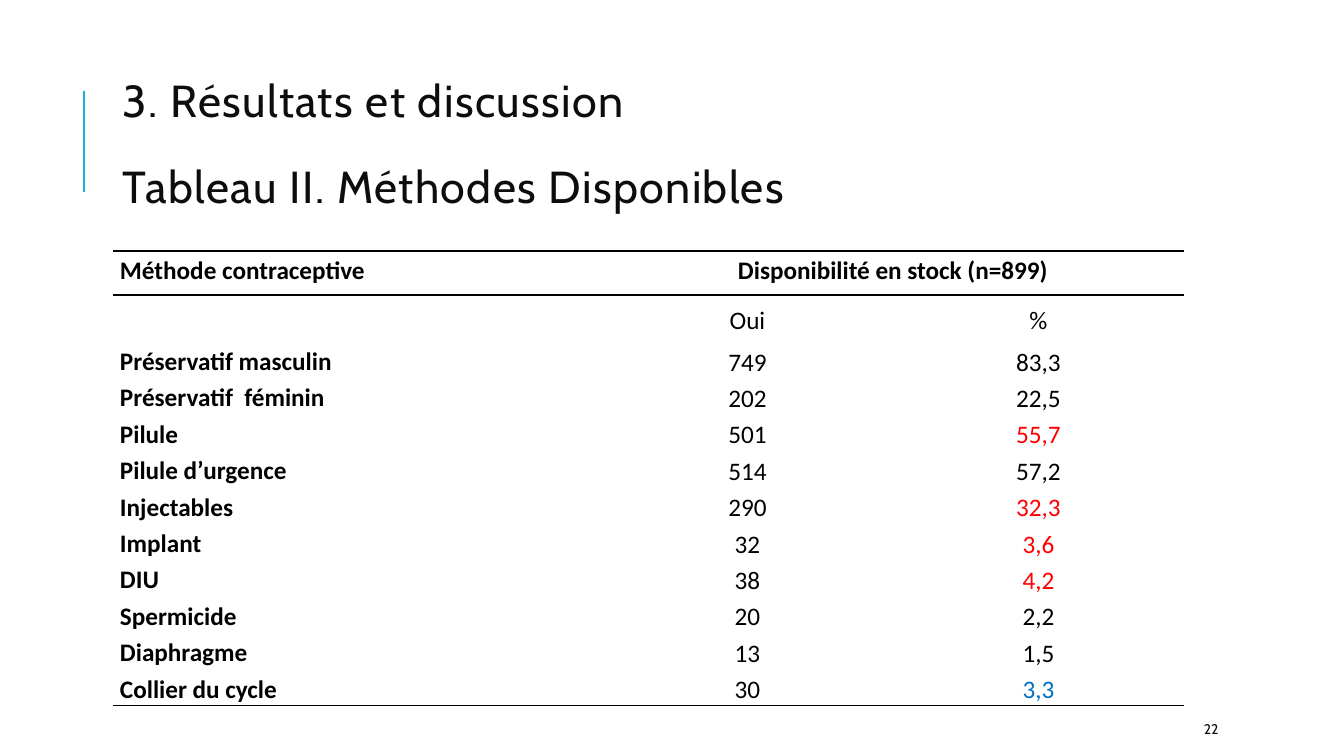
from lxml import etree
from pptx import Presentation
from pptx.dml.color import RGBColor
from pptx.enum.shapes import MSO_CONNECTOR
from pptx.enum.text import MSO_ANCHOR, PP_ALIGN
from pptx.oxml.ns import qn
from pptx.util import Emu, Pt

TITLE_LINES = ["3. Résultats et discussion", "Tableau II. Méthodes Disponibles"]
HEADER = ("Méthode contraceptive", "Disponibilité en stock (n=899)", "")
SUBHEADER = ("", "Oui", "%")
METHODS = [
    ("Préservatif masculin", "749", "83,3"),
    ("Préservatif  féminin", "202", "22,5"),
    ("Pilule", "501", "55,7"),
    ("Pilule d’urgence", "514", "57,2"),
    ("Injectables", "290", "32,3"),
    ("Implant", "32", "3,6"),
    ("DIU", "38", "4,2"),
    ("Spermicide", "20", "2,2"),
    ("Diaphragme", "13", "1,5"),
    ("Collier du cycle", "30", "3,3"),
]
HIGHLIGHTS = {"Pilule": "red", "Injectables": "red", "Implant": "red", "DIU": "red",
              "Collier du cycle": "blue"}
PAGE_NUMBER = "22"

THEME = {
    "title_font": "Cabin", "table_font": "Calibri",
    "title_size": 32, "table_size": 18, "page_size": 10,
    "ink": "0D0D0D", "black": "000000", "red": "FF0000", "blue": "0070C0",
    "accent": "1CADE4",
}

# Lengths in px
EMU_PER_PX = 914400 / 100.8
SLIDE_SIZE = (1344, 756)
TITLE_BOX = (113, 65, 1071, 165)
TABLE_BOX = (113, 251, 1071, 455)
PAGE_BOX = (1194, 714, 107, 30)
ACCENT_LINE = (84, 192, 84, 91)
COLUMN_WIDTHS = (489, 291, 291)
HEADER_HEIGHTS = (44, 47)
CELL_MARGIN = 7

LEFT, CENTER = PP_ALIGN.LEFT, PP_ALIGN.CENTER
TOP, MIDDLE = MSO_ANCHOR.TOP, MSO_ANCHOR.MIDDLE
PLAIN_TABLE_STYLE = "{2D5ABB26-0587-4C30-8999-92F81FD0307C}"


def px(length):
    return Emu(round(length * EMU_PER_PX))


def color(name):
    return RGBColor.from_string(THEME[name])


def add_run(paragraph, text, font, size, ink, bold=False):
    run = paragraph.add_run()
    run.text = text
    run.font.name = font
    run.font.size = Pt(size)
    run.font.bold = bold
    run.font.color.rgb = color(ink)
    return run


def add_text_frame(slide, box):
    frame = slide.shapes.add_textbox(*map(px, box)).text_frame
    frame.word_wrap = True
    frame.vertical_anchor = MIDDLE
    return frame


def add_title(slide):
    frame = add_text_frame(slide, TITLE_BOX)
    for index, line in enumerate(TITLE_LINES):
        paragraph = frame.add_paragraph() if index else frame.paragraphs[0]
        paragraph.line_spacing = 0.8
        paragraph.space_before = Pt(31 if index else 0)
        run = add_run(paragraph, line, THEME["title_font"], THEME["title_size"], "ink")
        run.font._element.set("spc", "100")


def add_accent_line(slide):
    line = slide.shapes.add_connector(MSO_CONNECTOR.STRAIGHT, *map(px, ACCENT_LINE))
    line.line.color.rgb = color("accent")
    line.line.width = Pt(1.5)
    etree.SubElement(line._element.spPr, qn("a:effectLst"))


def add_border(cell, side):
    """Draw a black rule on one side of a cell: lnT or lnB."""
    border = etree.Element(qn("a:" + side), w=str(Pt(1)))
    fill = etree.SubElement(border, qn("a:solidFill"))
    etree.SubElement(fill, qn("a:srgbClr"), val=THEME["black"])
    cell._tc.get_or_add_tcPr().insert(0, border)


def fill_cell(cell, text, align, anchor, bold, ink):
    cell.fill.background()
    cell.margin_left = cell.margin_right = px(CELL_MARGIN)
    cell.margin_top = cell.margin_bottom = 0
    cell.vertical_anchor = anchor
    if text:
        paragraph = cell.text_frame.paragraphs[0]
        paragraph.alignment = align
        paragraph.line_spacing = 1.15
        add_run(paragraph, text, THEME["table_font"], THEME["table_size"], ink, bold)


def add_methods_table(slide):
    rows = [HEADER, SUBHEADER, *METHODS]
    last = len(rows) - 1
    table = slide.shapes.add_table(len(rows), len(HEADER), *map(px, TABLE_BOX)).table
    table.first_row = table.horz_banding = False
    table._tbl.tblPr.find(qn("a:tableStyleId")).text = PLAIN_TABLE_STYLE
    for column, width in zip(table.columns, COLUMN_WIDTHS):
        column.width = px(width)
    method_height = (TABLE_BOX[3] - sum(HEADER_HEIGHTS)) / len(METHODS)
    heights = [*HEADER_HEIGHTS, *[method_height] * len(METHODS)]

    for r, values in enumerate(rows):
        table.rows[r].height = px(heights[r])
        for c, text in enumerate(values):
            cell = table.cell(r, c)
            is_label = c == 0
            top_anchored = r == 0 or (is_label and r < last)
            ink = HIGHLIGHTS.get(values[0], "black") if c == 2 else "black"
            fill_cell(cell, text, LEFT if is_label else CENTER,
                      TOP if top_anchored else MIDDLE, is_label or r == 0, ink)
            if r in (0, last):
                add_border(cell, "lnB")
            if r == 0:
                add_border(cell, "lnT")
    table.cell(0, 1).merge(table.cell(0, 2))


def add_page_number(slide):
    paragraph = add_text_frame(slide, PAGE_BOX).paragraphs[0]
    add_run(paragraph, PAGE_NUMBER, THEME["title_font"], THEME["page_size"], "ink")


def main():
    presentation = Presentation()
    presentation.slide_width, presentation.slide_height = map(px, SLIDE_SIZE)
    slide = presentation.slides.add_slide(presentation.slide_layouts[6])
    add_accent_line(slide)
    add_title(slide)
    add_methods_table(slide)
    add_page_number(slide)
    presentation.save("out.pptx")


if __name__ == "__main__":
    main()
